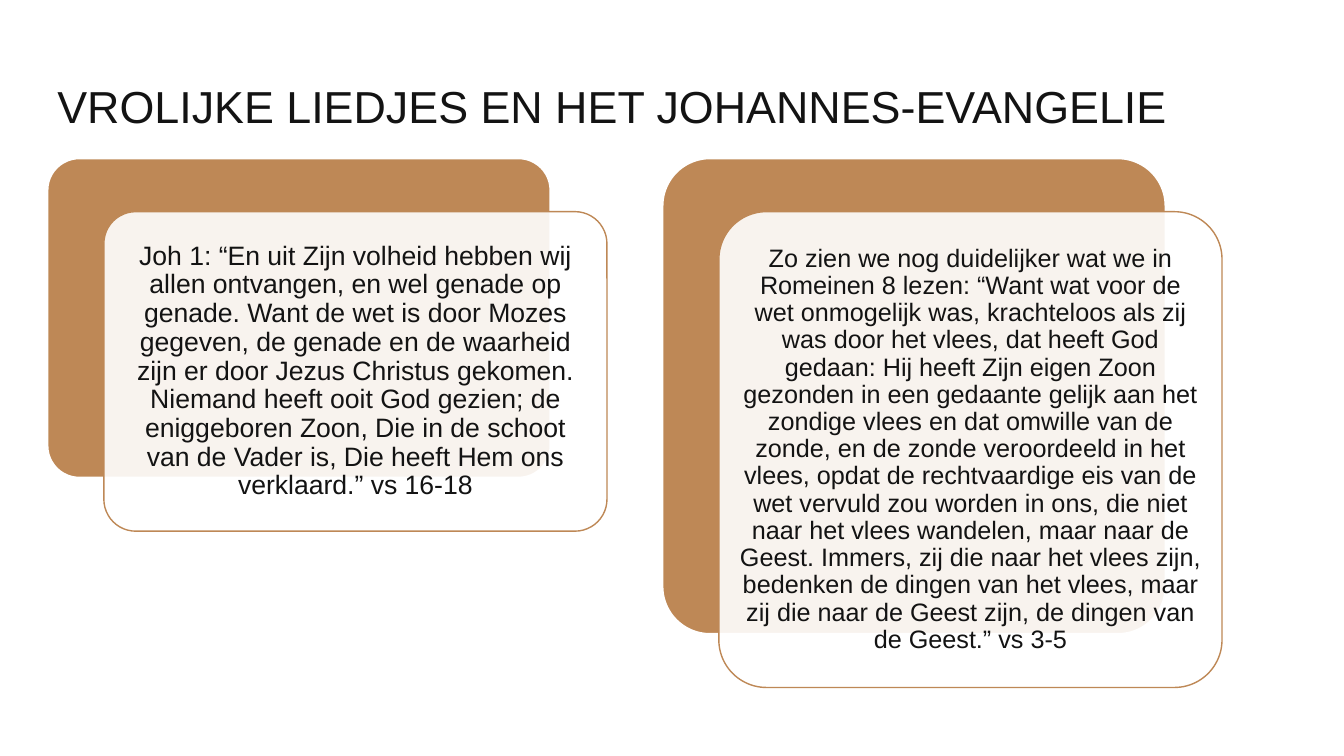
from dataclasses import dataclass

from lxml.etree import SubElement
from pptx import Presentation
from pptx.dml.color import RGBColor
from pptx.enum.shapes import MSO_SHAPE as Shape
from pptx.enum.text import MSO_ANCHOR as Anchor, PP_ALIGN as Align
from pptx.oxml.ns import qn
from pptx.shapes.autoshape import Shape as AutoShape
from pptx.slide import Slide
from pptx.text.text import TextFrame
from pptx.util import Inches, Pt

INK = RGBColor(0x13, 0x13, 0x13)
BRONZE = RGBColor(0xBE, 0x88, 0x56)
WHITE = RGBColor(0xFF, 0xFF, 0xFF)

PANEL_TOP = 1.57
PANEL_WIDTH = 4.99
CARD_SHIFT_X = 0.56
CARD_SHIFT_Y = 0.53


@dataclass(frozen=True)
class Passage:
    left: float
    height: float
    font_size: int
    inset: float
    quote: str


PASSAGES = [
    Passage(
        0.47, 3.17, 19, 0.08,
        "Joh 1: “En uit Zijn volheid hebben wij allen ontvangen, en wel genade op genade. "
        "Want de wet is door Mozes gegeven, de genade en de waarheid zijn er door Jezus "
        "Christus gekomen. Niemand heeft ooit God gezien; de eniggeboren Zoon, Die in de "
        "schoot van de Vader is, Die heeft Hem ons verklaard.” vs 16-18",
    ),
    Passage(
        6.57, 4.72, 18, 0.07,
        "Zo zien we nog duidelijker wat we in Romeinen 8 lezen: “Want wat voor de wet "
        "onmogelijk was, krachteloos als zij was door het vlees, dat heeft God gedaan: Hij "
        "heeft Zijn eigen Zoon gezonden in een gedaante gelijk aan het zondige vlees en dat "
        "omwille van de zonde, en de zonde veroordeeld in het vlees, opdat de rechtvaardige "
        "eis van de wet vervuld zou worden in ons, die niet naar het vlees wandelen, maar "
        "naar de Geest. Immers, zij die naar het vlees zijn, bedenken de dingen van het "
        "vlees, maar zij die naar de Geest zijn, de dingen van de Geest.” vs 3-5",
    ),
]


def write(frame: TextFrame, text: str, size: int, align: Align, anchor: Anchor) -> None:
    """Fill a text frame with one styled paragraph."""
    frame.word_wrap = True
    frame.vertical_anchor = anchor
    paragraph = frame.paragraphs[0]
    paragraph.text = text
    paragraph.alignment = align
    paragraph.line_spacing = 0.9
    font = paragraph.runs[0].font
    font.name = "Arial"
    font.size = Pt(size)
    font.color.rgb = INK


def add_rounded(slide: Slide, left: float, top: float, height: float,
                fill: RGBColor, outline: RGBColor, weight: float) -> AutoShape:
    """Add a rounded rectangle of the common width."""
    rounded = slide.shapes.add_shape(
        Shape.ROUNDED_RECTANGLE, Inches(left), Inches(top), Inches(PANEL_WIDTH), Inches(height))
    rounded.adjustments[0] = 0.1
    rounded.shadow.inherit = False
    rounded.fill.solid()
    rounded.fill.fore_color.rgb = fill
    rounded.line.color.rgb = outline
    rounded.line.width = Pt(weight)
    return rounded


def add_passage(slide: Slide, passage: Passage) -> None:
    """Draw a bronze panel with a translucent quote card shifted over it."""
    add_rounded(slide, passage.left, PANEL_TOP, passage.height, BRONZE, WHITE, 1.5)
    card = add_rounded(slide, passage.left + CARD_SHIFT_X, PANEL_TOP + CARD_SHIFT_Y,
                       passage.height, WHITE, BRONZE, 1)
    card_color = card.fill._xPr.find(qn("a:solidFill"))[0]
    SubElement(card_color, qn("a:alpha"), val="90000")
    frame = card.text_frame
    frame.margin_left = frame.margin_right = Inches(passage.inset)
    frame.margin_top = frame.margin_bottom = Inches(passage.inset)
    write(frame, passage.quote, passage.font_size, Align.CENTER, Anchor.MIDDLE)


def main() -> None:
    """Build the slide and save it."""
    deck = Presentation()
    deck.slide_width = Inches(13.33)
    deck.slide_height = Inches(7.5)
    slide = deck.slides.add_slide(deck.slide_layouts[6])
    heading = slide.shapes.add_textbox(Inches(0.47), Inches(0.31), Inches(11.65), Inches(1.06))
    write(heading.text_frame, "VROLIJKE LIEDJES EN HET JOHANNES-EVANGELIE",
          32, Align.LEFT, Anchor.BOTTOM)
    for passage in PASSAGES:
        add_passage(slide, passage)
    deck.save("out.pptx")


if __name__ == "__main__":
    main()
